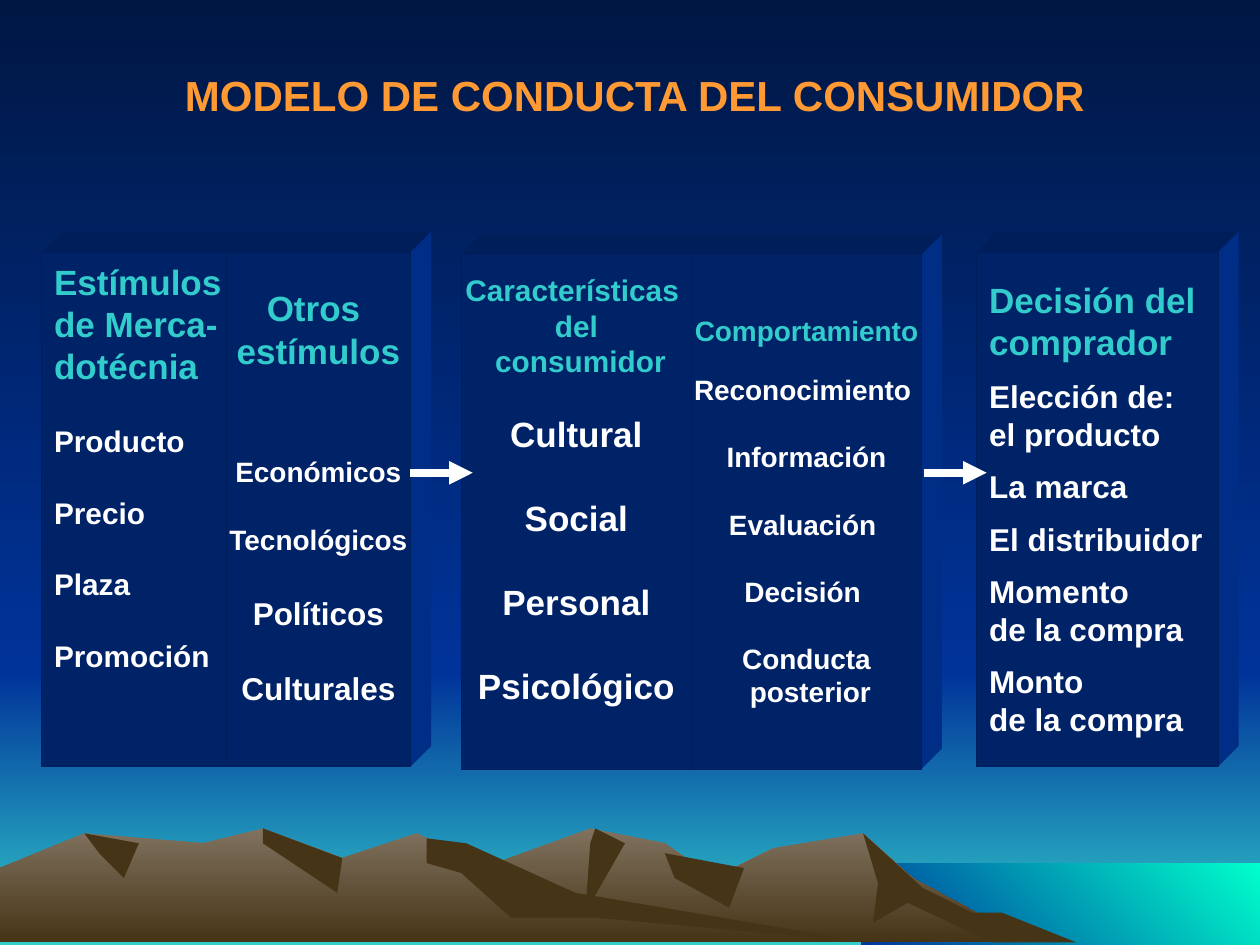
from dataclasses import dataclass

from lxml.etree import SubElement
from pptx import Presentation
from pptx.dml.color import RGBColor
from pptx.enum.shapes import MSO_CONNECTOR as Connector, MSO_SHAPE as Shape
from pptx.enum.text import MSO_ANCHOR as Anchor, PP_ALIGN as Align
from pptx.oxml.ns import qn
from pptx.util import Cm, Pt


@dataclass(frozen=True)
class Theme:
    font: str = "Arial"
    title: str = "FF9933"
    heading: str = "33CCCC"
    text: str = "FFFFFF"
    front: str = "002368"
    top: str = "001E59"
    side: str = "002D86"
    sky: tuple = ("001744", "003399")
    horizon: tuple = ("003399", "33CCCC")
    sea: tuple = ("003399", "00FFCC")
    rock: tuple = ("80725F", "463416")
    shade: str = "463416"
    title_size: int = 24
    line_factor: float = 1.2


THEME = Theme()
TITLE = "MODELO DE CONDUCTA DEL CONSUMIDOR"

# Columns: alignment, top inset (pt), then runs of paragraphs that share
# colour, type size and gap before each paragraph (pt); "\n" starts an ungapped one
MARKETING = (Align.LEFT, 5, [
    (THEME.heading, 20, 0, ["Estímulos\nde Merca-\ndotécnia"]),
    (THEME.text, 17, 20.6, ["Producto", "Precio", "Plaza", "Promoción"])])
OTHER = (Align.CENTER, 20, [
    (THEME.heading, 20, 0, ["Otros \nestímulos"]),
    (THEME.text, 16, 48, ["Económicos"]),
    (THEME.text, 16, 19.2, ["Tecnológicos"]),
    (THEME.text, 18, 21.6, ["Políticos", "Culturales"])])
TRAITS = (Align.CENTER, 10, [
    (THEME.heading, 17, 0, ["Características \ndel\n consumidor"]),
    (THEME.text, 20, 19.2, ["Cultural"]),
    (THEME.text, 20, 24, ["Social", "Personal", "Psicológico"])])
BEHAVIOUR = (Align.CENTER, 34, [
    (THEME.heading, 16, 0, ["Comportamiento"]),
    (THEME.text, 16, 14.4, ["Reconocimiento "]),
    (THEME.text, 16, 19.2, ["Información", "Evaluación ", "Decisión ",
                            "Conducta\n posterior"])])
DECISION = (Align.LEFT, 15, [
    (THEME.heading, 20, 0, ["Decisión del\ncomprador"]),
    (THEME.text, 18, 8.4, ["Elección de:\nel producto", "La marca", "El distribuidor",
                           "Momento\nde la compra", "Monto\nde la compra"])])

# Blocks: left, top, column width (cm), columns
BLOCKS = [(0.84, 5.08, 3.72, [MARKETING, OTHER]),
          (9.3, 5.13, 4.64, [TRAITS, BEHAVIOUR]),
          (19.69, 5.08, 4.87, [DECISION])]
BLOCK_HEIGHT, DEPTH = 10.37, 0.41
ARROW_STARTS, ARROW_Y, ARROW_LENGTH = (8.26, 18.62), 9.53, 1.27

# Landscape (cm)
WIDTH, HEIGHT = 25.4, 19.05
HORIZON, SEA_LEFT, SEA_TOP = 13.54, 17.35, 17.4

# Mountains: fill, outline (cm)
MOUNTAINS = [
    (THEME.rock, [
        (6.5, 19), (10, 17.4), (11.9, 16.7), (13.4, 17), (14.4, 17.7), (15.6, 17.1),
        (17.4, 16.8), (18.4, 17.7), (20.8, 19)]),
    (THEME.shade, [
        (17.4, 16.8), (18.6, 17.9), (19.6, 18.4), (20.2, 18.4), (21.7, 19), (20, 19),
        (18.3, 18.2), (17.6, 18.6), (17.7, 17.8)]),
    (THEME.shade, [(12, 16.7), (12.6, 17), (11.8, 18.4), (11.9, 17)]),
    (THEME.shade, [(13.4, 17.2), (15, 17.5), (14.7, 18.3), (13.6, 17.7)]),
    (THEME.rock, [
        (0, 17.5), (1.7, 16.8), (4.1, 17), (5.3, 16.7), (6.9, 17.3), (8.4, 16.8),
        (11, 18), (17.5, 19), (0, 19)]),
    (THEME.shade, [(5.3, 16.7), (6.9, 17.3), (6.8, 18), (5.3, 17)]),
    (THEME.shade, [
        (8.6, 16.9), (9.4, 17), (11.6, 18), (17.5, 19), (12, 18.5), (10.3, 18.5),
        (9.3, 17.6), (8.6, 17.4)]),
    (THEME.shade, [(1.7, 16.8), (2.8, 17), (2.5, 17.7), (2, 17.2)]),
]


def rgb(color):
    return RGBColor.from_string(color)


def paint(shape, fill, angle=270):
    """Fill with one colour, or with a two-colour gradient; no line, no shadow."""
    shape.shadow.inherit = False
    shape.line.fill.background()
    if isinstance(fill, str):
        shape.fill.solid()
        shape.fill.fore_color.rgb = rgb(fill)
        return
    shape.fill.gradient()
    shape.fill.gradient_angle = angle
    for stop, color in zip(shape.fill.gradient_stops, fill):
        stop.color.rgb = rgb(color)


def add_band(page, left, top, bottom, fill, angle=270):
    band = page.shapes.add_shape(Shape.RECTANGLE, Cm(left), Cm(top),
                                 Cm(WIDTH - left), Cm(bottom - top))
    paint(band, fill, angle)


def add_polygon(page, points, fill):
    corners = [(Cm(x), Cm(y)) for x, y in points]
    builder = page.shapes.build_freeform(*corners[0])
    builder.add_line_segments(corners[1:], close=True)
    paint(builder.convert_to_shape(), fill)


def write_groups(box, align, inset, groups):
    """Write groups of paragraphs from the top of a box."""
    frame = box.text_frame
    frame.word_wrap = True
    frame.vertical_anchor = Anchor.TOP
    frame.margin_left = Cm(0.25) if align == Align.LEFT else 0
    frame.margin_top = Pt(inset)
    frame.margin_right = frame.margin_bottom = 0
    lines = [(line, color, size, 0 if index else gap)
             for color, size, gap, entries in groups
             for entry in entries
             for index, line in enumerate(entry.split("\n"))]
    for index, (line, color, size, gap) in enumerate(lines):
        para = frame.add_paragraph() if index else frame.paragraphs[0]
        para.text = line
        para.alignment = align
        para.line_spacing = Pt(size * THEME.line_factor)
        para.space_before = Pt(gap)
        font = para.runs[0].font
        font.name, font.size, font.bold = THEME.font, Pt(size), True
        font.color.rgb = rgb(color)


def add_block(page, left, top, column_width, columns):
    right, bottom = left + column_width * len(columns), top + BLOCK_HEIGHT
    back_right, back_top = right + DEPTH, top - DEPTH
    add_polygon(page, [(left, top), (left + DEPTH, back_top), (back_right, back_top),
                       (right, top)], THEME.top)
    add_polygon(page, [(right, top), (back_right, back_top), (back_right, bottom - DEPTH),
                       (right, bottom)], THEME.side)
    for index, column in enumerate(columns):
        box = page.shapes.add_shape(Shape.RECTANGLE, Cm(left + index * column_width), Cm(top),
                                    Cm(column_width), Cm(BLOCK_HEIGHT))
        paint(box, THEME.front)
        box.line.color.rgb = rgb(THEME.top)
        box.line.width = Pt(0.25)
        write_groups(box, *column)


def add_arrow(page, start):
    arrow = page.shapes.add_connector(Connector.STRAIGHT, Cm(start), Cm(ARROW_Y),
                                      Cm(start + ARROW_LENGTH), Cm(ARROW_Y))
    arrow.line.color.rgb = rgb(THEME.text)
    arrow.line.width = Pt(4.5)
    properties = arrow._element.spPr
    SubElement(properties.find(qn("a:ln")), qn("a:tailEnd"), type="triangle")
    SubElement(properties, qn("a:effectLst"))


def main():
    deck = Presentation()
    deck.slide_width, deck.slide_height = Cm(WIDTH), Cm(HEIGHT)
    page = deck.slides.add_slide(deck.slide_layouts[6])
    # Landscape
    add_band(page, 0, HORIZON, HEIGHT, THEME.horizon)
    add_band(page, 0, 0, HORIZON, THEME.sky)
    add_band(page, SEA_LEFT, SEA_TOP, HEIGHT, THEME.sea, 45)
    for fill, outline in MOUNTAINS:
        add_polygon(page, outline, fill)
    # Title
    title = page.shapes.add_textbox(Cm(1.9), Cm(1.27), Cm(21.8), Cm(1.27))
    write_groups(title, Align.CENTER, 4, [(THEME.title, THEME.title_size, 0, [TITLE])])
    # Model
    for block in BLOCKS:
        add_block(page, *block)
    for start in ARROW_STARTS:
        add_arrow(page, start)
    deck.save("out.pptx")


if __name__ == "__main__":
    main()
